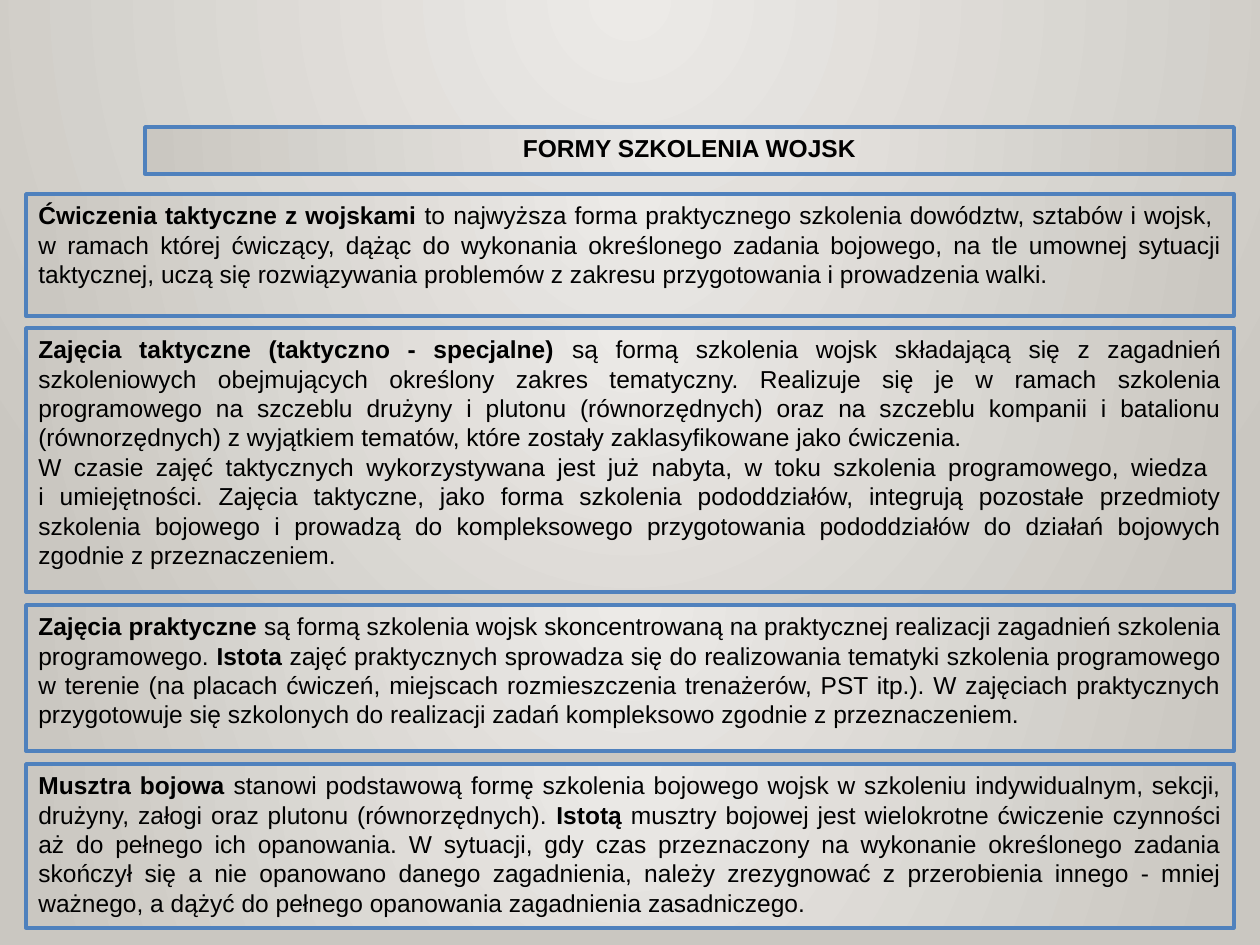
from lxml.etree import SubElement
from pptx import Presentation
from pptx.dml.color import RGBColor
from pptx.enum.shapes import MSO_SHAPE
from pptx.enum.text import MSO_ANCHOR, MSO_AUTO_SIZE, PP_ALIGN
from pptx.oxml.ns import qn
from pptx.util import Emu, Pt

PX_PER_INCH = 126
LIGHT = RGBColor(0xEC, 0xEA, 0xE7)
DARK = RGBColor(0xCA, 0xC7, 0xC1)
BLUE = RGBColor(0x4F, 0x81, 0xBD)
BLACK = RGBColor(0, 0, 0)

LEFT, RIGHT = 26, 1234
TITLE_LEFT = 145

FORMS = [
    (194, 122, [
        "*Ćwiczenia taktyczne z wojskami *to najwyższa forma praktycznego szkolenia "
        "dowództw, sztabów i wojsk, \nw ramach której ćwiczący, dążąc do wykonania "
        "określonego zadania bojowego, na tle umownej sytuacji taktycznej, uczą się "
        "rozwiązywania problemów z zakresu przygotowania i prowadzenia walki.",
    ]),
    (328, 264, [
        "*Zajęcia taktyczne (taktyczno - specjalne) *są formą szkolenia wojsk "
        "składającą się z zagadnień szkoleniowych obejmujących określony zakres "
        "tematyczny. Realizuje się je w ramach szkolenia programowego na szczeblu "
        "drużyny i plutonu (równorzędnych) oraz na szczeblu kompanii i batalionu "
        "(równorzędnych) z wyjątkiem tematów, które zostały zaklasyfikowane jako "
        "ćwiczenia.",
        "W czasie zajęć taktycznych wykorzystywana jest już nabyta, w toku szkolenia "
        "programowego, wiedza \ni umiejętności. Zajęcia taktyczne, jako forma "
        "szkolenia pododdziałów, integrują pozostałe przedmioty szkolenia bojowego "
        "i prowadzą do kompleksowego przygotowania pododdziałów do działań bojowych "
        "zgodnie z przeznaczeniem.",
    ]),
    (605, 146, [
        "*Zajęcia praktyczne *są formą szkolenia wojsk skoncentrowaną na praktycznej "
        "realizacji zagadnień szkolenia programowego. *Istota *zajęć praktycznych "
        "sprowadza się do realizowania tematyki szkolenia programowego w terenie "
        "(na placach ćwiczeń, miejscach rozmieszczenia trenażerów, PST itp.). "
        "W zajęciach praktycznych przygotowuje się szkolonych do realizacji zadań "
        "kompleksowo zgodnie z przeznaczeniem.",
    ]),
    (764, 164, [
        "*Musztra bojowa *stanowi podstawową formę szkolenia bojowego wojsk "
        "w szkoleniu indywidualnym, sekcji, drużyny, załogi oraz plutonu "
        "(równorzędnych). *Istotą* musztry bojowej jest wielokrotne ćwiczenie "
        "czynności aż do pełnego ich opanowania. W sytuacji, gdy czas przeznaczony "
        "na wykonanie określonego zadania skończył się a nie opanowano danego "
        "zagadnienia, należy zrezygnować z przerobienia innego - mniej ważnego, "
        "a dążyć do pełnego opanowania zagadnienia zasadniczego.",
    ]),
]


def px(length):
    return Emu(round(length * 914400 / PX_PER_INCH))


def fill_radial(owner, fill):
    fill.gradient()
    for stop, color in zip(fill.gradient_stops, (LIGHT, DARK)):
        stop.color.rgb = color
    gradient = owner.element.find(".//" + qn("a:gradFill"))
    gradient.remove(gradient.find(qn("a:lin")))
    circle = SubElement(gradient, qn("a:path"), path="circle")
    SubElement(circle, qn("a:fillToRect"), l="43000", t="0", r="43000", b="100000")


def add_run(paragraph, text, bold, size, color):
    run = paragraph.add_run()
    run.text = text
    run.font.name = "Arial"
    run.font.size = Pt(size)
    run.font.bold = bold
    run.font.color.rgb = color


def write_text(frame, paragraphs, align=PP_ALIGN.JUSTIFY, size=14, color=BLACK):
    frame.word_wrap = True
    frame.auto_size = MSO_AUTO_SIZE.NONE
    frame.vertical_anchor = MSO_ANCHOR.TOP
    for index, text in enumerate(paragraphs):
        paragraph = frame.add_paragraph() if index else frame.paragraphs[0]
        paragraph.alignment = align
        for part, segment in enumerate(text.split("*")):
            for row, line in enumerate(segment.split("\n")):
                if row:
                    paragraph.add_line_break()
                if line:
                    add_run(paragraph, line, part % 2 == 1, size, color)


def style_panel(panel):
    fill_radial(panel, panel.fill)
    panel.line.color.rgb = BLUE
    panel.line.width = Pt(2)


def place_title(slide):
    title = slide.shapes.title
    title.left, title.top = px(TITLE_LEFT), px(127)
    title.width, title.height = px(RIGHT - TITLE_LEFT), px(47)
    style_panel(title)
    write_text(title.text_frame, ["*FORMY SZKOLENIA WOJSK*"], align=PP_ALIGN.CENTER)


def add_form(slide, top, height, paragraphs):
    panel = slide.shapes.add_shape(
        MSO_SHAPE.RECTANGLE, px(LEFT), px(top), px(RIGHT - LEFT), px(height))
    panel.shadow.inherit = False
    style_panel(panel)
    write_text(panel.text_frame, paragraphs)


def main():
    presentation = Presentation()
    presentation.slide_width, presentation.slide_height = px(1260), px(945)
    slide = presentation.slides.add_slide(presentation.slide_layouts[5])
    fill_radial(slide, slide.background.fill)
    place_title(slide)
    for top, height, paragraphs in FORMS:
        add_form(slide, top, height, paragraphs)
    presentation.save("out.pptx")


if __name__ == "__main__":
    main()
